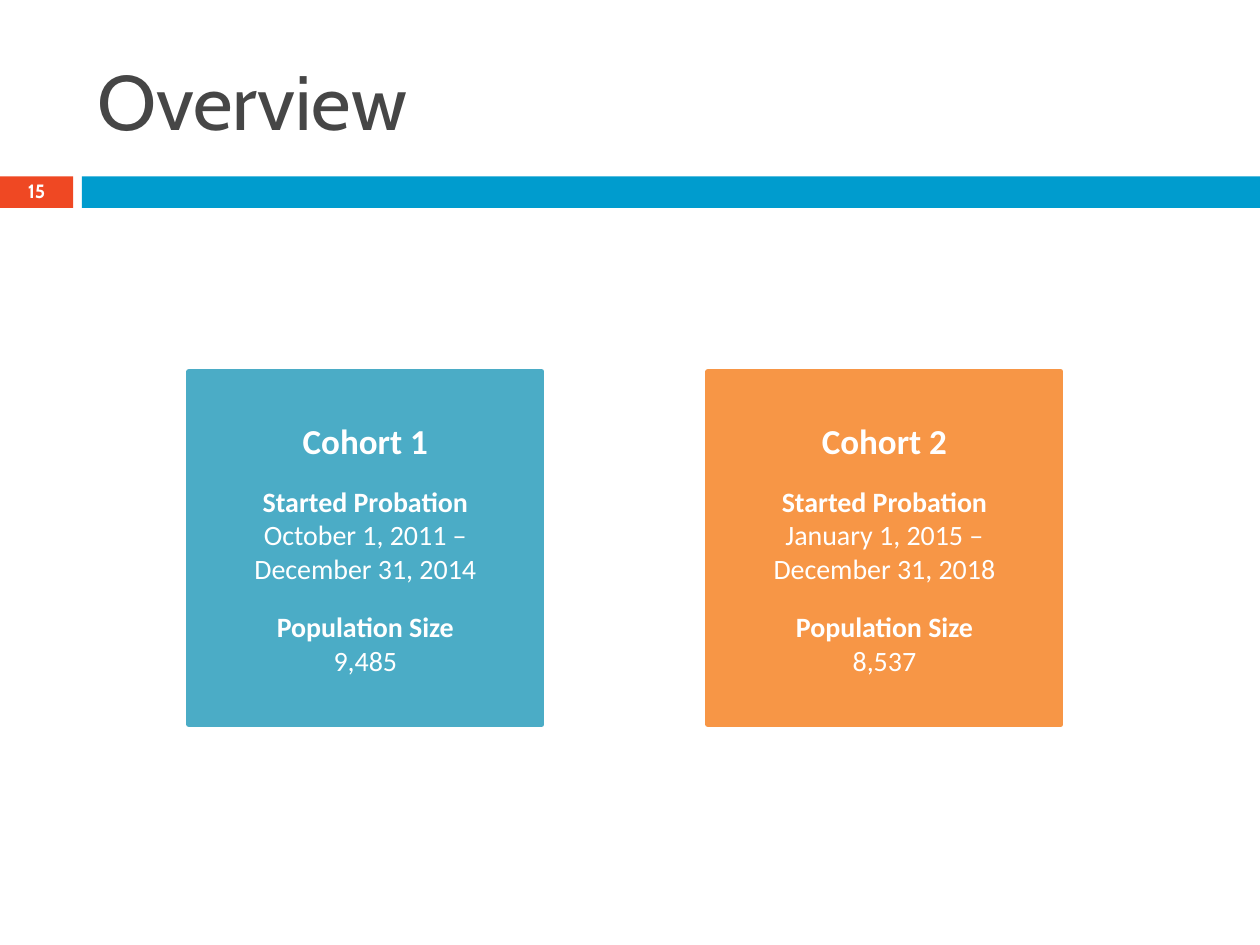
from dataclasses import dataclass

from pptx import Presentation
from pptx.dml.color import RGBColor
from pptx.enum.shapes import MSO_SHAPE
from pptx.enum.text import MSO_ANCHOR, MSO_AUTO_SIZE, PP_ALIGN
from pptx.util import Inches, Pt

RECT = MSO_SHAPE.RECTANGLE
MIDDLE = MSO_ANCHOR.MIDDLE
FIXED = MSO_AUTO_SIZE.NONE
LEFT, CENTER = PP_ALIGN.LEFT, PP_ALIGN.CENTER


@dataclass(frozen=True)
class Theme:
    head: str = "Cabin"
    body: str = "Calibri"
    ink: str = "464646"
    white: str = "FFFFFF"
    red: str = "EF4823"
    blue: str = "009CCE"
    teal: str = "4BACC6"
    orange: str = "F79646"
    title: int = 44
    name: int = 20
    text: int = 16
    number: int = 11


THEME = Theme()
COHORTS = [
    ("Cohort 1", "October 1, 2011 –", "December 31, 2014", "9,485", THEME.teal),
    ("Cohort 2", "January 1, 2015 –", "December 31, 2018", "8,537", THEME.orange),
]


def write(para, text, *, size, font=THEME.body, color=THEME.white,
          bold=False, align=CENTER, before=0):
    para.alignment = align
    para.space_before = Pt(before)
    run = para.add_run()
    run.text = text
    run.font.name = font
    run.font.size = Pt(size)
    run.font.bold = bold
    run.font.color.rgb = RGBColor.from_string(color)


def block(slide, box, color, line=0):
    shape = slide.shapes.add_shape(RECT, *map(Inches, box))
    shape.shadow.inherit = False
    shape.fill.solid()
    shape.fill.fore_color.rgb = RGBColor.from_string(color)
    if line:
        shape.line.color.rgb = RGBColor.from_string(color)
        shape.line.width = Pt(line)
    else:
        shape.line.fill.background()
    frame = shape.text_frame
    frame.word_wrap = True
    frame.vertical_anchor = MIDDLE
    return frame


def header(slide, box):
    title = slide.shapes.title
    title.left, title.top, title.width, title.height = map(Inches, box)
    frame = title.text_frame
    frame.auto_size = FIXED
    frame.vertical_anchor = MIDDLE
    write(frame.paragraphs[0], "Overview", size=THEME.title,
          font=THEME.head, color=THEME.ink, align=LEFT)


def band(slide, box):
    x, y, width, height = box
    tab, start = 0.58, 0.65
    # Number tab, then the bar that fills the rest
    frame = block(slide, (x, y, tab, height), THEME.red)
    frame.margin_top = frame.margin_bottom = 0
    para = frame.paragraphs[0]
    para.line_spacing = 0.9
    write(para, "15", size=THEME.number, font=THEME.head, bold=True)
    block(slide, (x + start, y, width - start, height), THEME.blue)


def card(slide, box, cohort):
    name, first, last, count, color = cohort
    frame = block(slide, box, color, line=3)
    write(frame.paragraphs[0], name, size=THEME.name, bold=True)
    # Each line: text, bold, space before
    lines = [
        ("Started Probation", True, 13),
        (first, False, 0),
        (last, False, 0),
        ("Population Size", True, 14),
        (count, False, 0),
    ]
    for text, bold, gap in lines:
        write(frame.add_paragraph(), text, size=THEME.text, bold=bold, before=gap)


def cards(slide, box):
    x, y, width, side = box
    step = (width - side) / (len(COHORTS) - 1)
    for i, cohort in enumerate(COHORTS):
        card(slide, (x + i * step, y, side, side), cohort)


def main():
    deck = Presentation()
    deck.slide_width, deck.slide_height = Inches(10), Inches(7.5)
    slide = deck.slides.add_slide(deck.slide_layouts[5])
    header(slide, (0.67, 0.25, 8.92, 1.08))
    band(slide, (0, 1.4, 10, 0.25))
    cards(slide, (1.5, 2.95, 6.92, 2.8))
    deck.save("out.pptx")


if __name__ == "__main__":
    main()
